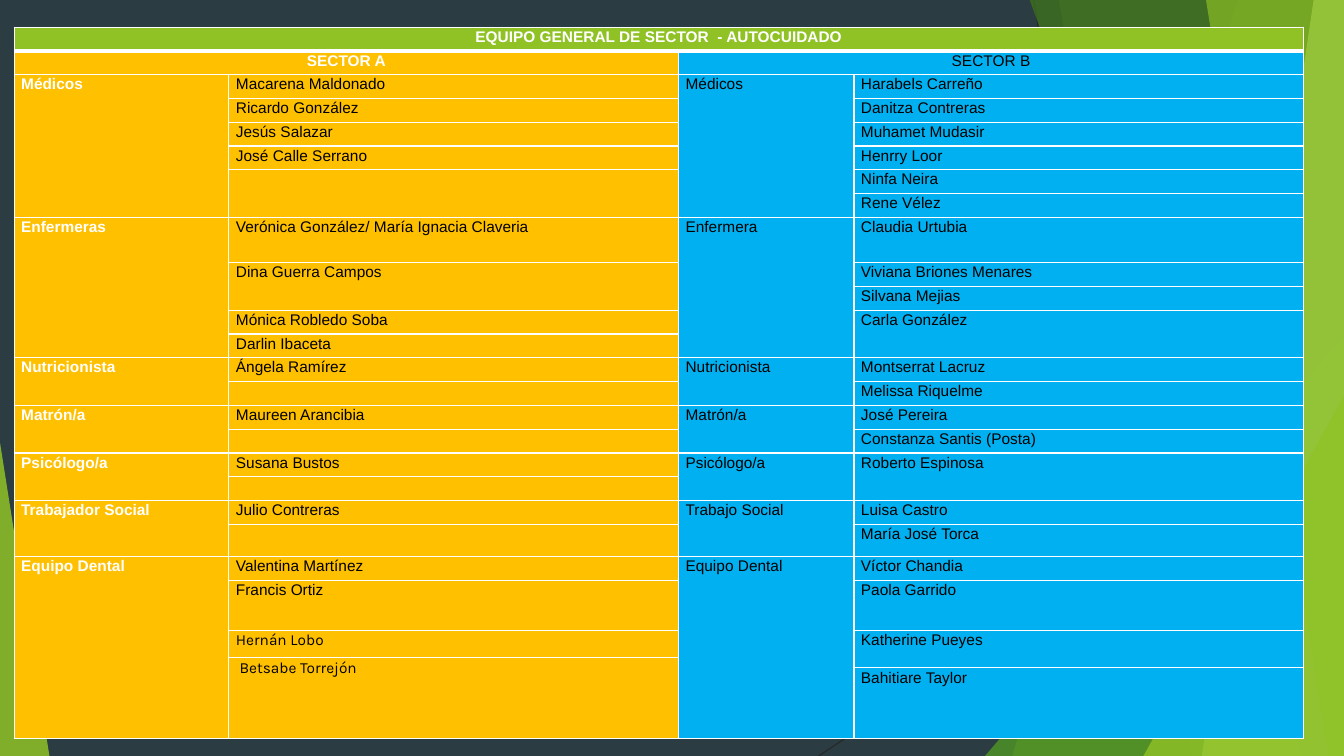
from pptx import Presentation
from pptx.dml.color import RGBColor
from pptx.enum import shapes, text
from pptx.oxml import ns
from pptx.util import Inches, Pt
from lxml import etree

DARK = RGBColor(0x2C, 0x3C, 0x43)
LINE_GRAY = RGBColor(0x26, 0x26, 0x26)
GREEN = RGBColor(0x90, 0xC2, 0x26)
MID_GREEN = RGBColor(0x54, 0xA0, 0x21)
DEEP_GREEN = RGBColor(0x3F, 0x78, 0x19)
PALE_GREEN = RGBColor(0xC0, 0xE4, 0x74)
AMBER = RGBColor(0xFF, 0xC0, 0x00)
BLUE = RGBColor(0x00, 0xB0, 0xF0)
WHITE = RGBColor(0xFF, 0xFF, 0xFF)
BLACK = RGBColor(0x00, 0x00, 0x00)

WIDTH, HEIGHT = 13.33, 7.5
TABLE_BOX = (0.14, 0.27, 12.79, 7.06)
COLUMNS = (2.13, 4.46, 1.74, 4.46)
ROW_COUNT = 26
TALL_ROWS = {8: 0.45, 20: 0.32, 22: 0.5, 23: 0.27, 24: 0.1, 25: 0.7}
KARLA_NAMES = ("Hernán Lobo", " Betsabe Torrejón")

SECTOR_A = [
    ("Médicos", [("Macarena Maldonado", 1), ("Ricardo González", 1), ("Jesús Salazar", 1),
                 ("José Calle Serrano", 1), ("", 2)]),
    ("Enfermeras", [("Verónica González/ María Ignacia Claveria", 1), ("Dina Guerra Campos", 2),
                    ("Mónica Robledo Soba", 1), ("Darlin Ibaceta", 1)]),
    ("Nutricionista", [("Ángela Ramírez", 1), ("", 1)]),
    ("Matrón/a", [("Maureen Arancibia", 1), ("", 1)]),
    ("Psicólogo/a", [("Susana Bustos", 1), ("", 1)]),
    ("Trabajador Social", [("Julio Contreras", 1), ("", 1)]),
    ("Equipo Dental", [("Valentina Martínez", 1), ("Francis Ortiz", 1),
                       (KARLA_NAMES[0], 1), (KARLA_NAMES[1], 2)]),
]
SECTOR_B = [
    ("Médicos", [("Harabels Carreño", 1), ("Danitza Contreras", 1), ("Muhamet Mudasir", 1),
                 ("Henrry Loor", 1), ("Ninfa Neira", 1), ("Rene Vélez", 1)]),
    ("Enfermera", [("Claudia Urtubia", 1), ("Viviana Briones Menares", 1),
                   ("Silvana Mejias", 1), ("Carla González", 2)]),
    ("Nutricionista", [("Montserrat Lacruz", 1), ("Melissa Riquelme", 1)]),
    ("Matrón/a", [("José Pereira", 1), ("Constanza Santis (Posta)", 1)]),
    ("Psicólogo/a", [("Roberto Espinosa", 2)]),
    ("Trabajo Social", [("Luisa Castro", 1), ("María José Torca", 1)]),
    ("Equipo Dental", [("Víctor Chandia", 1), ("Paola Garrido", 1),
                       ("Katherine Pueyes", 2), ("Bahitiare Taylor", 1)]),
]


def paint(shape, color, opacity):
    """Give a shape a translucent fill with neither line nor shadow."""
    shape.shadow.inherit = False
    shape.line.fill.background()
    shape.fill.solid()
    shape.fill.fore_color.rgb = color
    tint = shape.fill._xPr.find(".//" + ns.qn("a:srgbClr"))
    etree.SubElement(tint, ns.qn("a:alpha"), val=str(opacity * 1000))


def add_band(slide, top_left, bottom_left, color, opacity):
    """Draw a band that runs from a slanted left edge to the slide's right edge."""
    top = -0.01
    corners = [(WIDTH, top), (WIDTH, HEIGHT), (bottom_left, HEIGHT)]
    builder = slide.shapes.build_freeform(Inches(top_left), Inches(top))
    builder.add_line_segments([(Inches(x), Inches(y)) for x, y in corners], close=True)
    paint(builder.convert_to_shape(), color, opacity)


def add_corner(slide, left, width, height, apex, color, opacity):
    """Stand a triangle on the bottom of the slide."""
    triangle = slide.shapes.add_shape(
        shapes.MSO_SHAPE.ISOSCELES_TRIANGLE, Inches(left), Inches(HEIGHT - height),
        Inches(width), Inches(height))
    triangle.adjustments[0] = apex
    paint(triangle, color, opacity)


def add_backdrop(slide):
    """Draw the dark background with its green facets."""
    slide.background.fill.solid()
    slide.background.fill.fore_color.rgb = DARK
    for ends in ((10.25, 0, 11.58, HEIGHT), (WIDTH, 4.03, 8.12, HEIGHT)):
        line = slide.shapes.add_connector(
            shapes.MSO_CONNECTOR.STRAIGHT, *[Inches(value) for value in ends])
        line.line.color.rgb = LINE_GRAY
        line.line.width = Pt(0.75)
        etree.SubElement(line._element.spPr, ns.qn("a:effectLst"))
    add_band(slide, 12.28, 10.04, GREEN, 30)
    add_band(slide, 10.5, 11.83, GREEN, 20)
    add_corner(slide, 9.77, 3.56, 4.17, 1, MID_GREEN, 72)
    add_band(slide, 10.21, 12.91, DEEP_GREEN, 70)
    add_band(slide, 13.03, 11.92, PALE_GREEN, 70)
    add_band(slide, 11.96, 13.18, GREEN, 65)
    add_corner(slide, 11.34, 1.99, 3.57, 1, GREEN, 80)
    add_corner(slide, 0, 0.49, 3.11, 0, GREEN, 85)


def add_borders(cell, bottom=1, top=1):
    """Outline a cell in white, with widths in points."""
    properties = cell._tc.get_or_add_tcPr()
    for side, width in (("L", 1), ("R", 1), ("T", top), ("B", bottom)):
        border = etree.SubElement(properties, ns.qn("a:ln" + side), w=str(Pt(width)))
        fill = etree.SubElement(border, ns.qn("a:solidFill"))
        etree.SubElement(fill, ns.qn("a:srgbClr"), val=str(WHITE))


def write(cell, words, color=BLACK, bold=False, font="Arial", size=11,
          align=text.PP_ALIGN.JUSTIFY):
    """Write one formatted paragraph into a cell."""
    paragraph = cell.text_frame.paragraphs[0]
    paragraph.alignment = align
    paragraph.line_spacing = 1.07
    if not words:
        etree.SubElement(paragraph._p, ns.qn("a:endParaRPr"), sz=str(size * 100))
        return
    run = paragraph.add_run()
    run.text = words
    run.font.name = font
    run.font.size = Pt(size)
    run.font.bold = bold
    run.font.color.rgb = color


def fill_sector(table, column, title, groups, fill, accent):
    """Fill two columns with a sector's heading, roles and names."""
    heading = table.cell(1, column)
    heading.merge(table.cell(1, column + 1))
    write(heading, title, align=text.PP_ALIGN.CENTER, **accent)
    row = 2
    for role, members in groups:
        role_cell, first_row = table.cell(row, column), row
        write(role_cell, role, **accent)
        for name, span in members:
            cell = table.cell(row, column + 1)
            if span > 1:
                cell.merge(table.cell(row + span - 1, column + 1))
            write(cell, name, font="Karla" if name in KARLA_NAMES else "Arial")
            row += span
        role_cell.merge(table.cell(row - 1, column))
    for index in range(1, ROW_COUNT):
        for cell in (table.cell(index, column), table.cell(index, column + 1)):
            cell.fill.solid()
            cell.fill.fore_color.rgb = fill


def add_team_table(slide, box):
    """Build the staff table for both sectors inside the given box."""
    frame = slide.shapes.add_table(
        ROW_COUNT, len(COLUMNS), *[Inches(value) for value in box])
    table = frame.table
    table.first_row = table.horz_banding = False
    for column, width in zip(table.columns, COLUMNS):
        column.width = Inches(width)
    regular = (box[3] - sum(TALL_ROWS.values())) / (ROW_COUNT - len(TALL_ROWS))
    for index, row in enumerate(table.rows):
        row.height = Inches(TALL_ROWS.get(index, regular))
        for cell in row.cells:
            cell.margin_left = cell.margin_right = Inches(0.07)
            cell.margin_top = cell.margin_bottom = 0
            add_borders(cell, bottom=3 if index == 0 else 1, top=3 if index == 1 else 1)
    title = table.cell(0, 0)
    title.merge(table.cell(0, len(COLUMNS) - 1))
    title.fill.solid()
    title.fill.fore_color.rgb = GREEN
    white_bold = {"color": WHITE, "bold": True}
    write(title, "EQUIPO GENERAL DE SECTOR  - AUTOCUIDADO",
          align=text.PP_ALIGN.CENTER, **white_bold)
    fill_sector(table, 0, "SECTOR A", SECTOR_A, AMBER, white_bold)
    fill_sector(table, 2, "SECTOR B", SECTOR_B, BLUE, {})


def main():
    """Build and save the presentation."""
    presentation = Presentation()
    presentation.slide_width = Inches(WIDTH)
    presentation.slide_height = Inches(HEIGHT)
    slide = presentation.slides.add_slide(presentation.slide_layouts[6])
    add_backdrop(slide)
    add_team_table(slide, TABLE_BOX)
    presentation.save("out.pptx")


if __name__ == "__main__":
    main()
